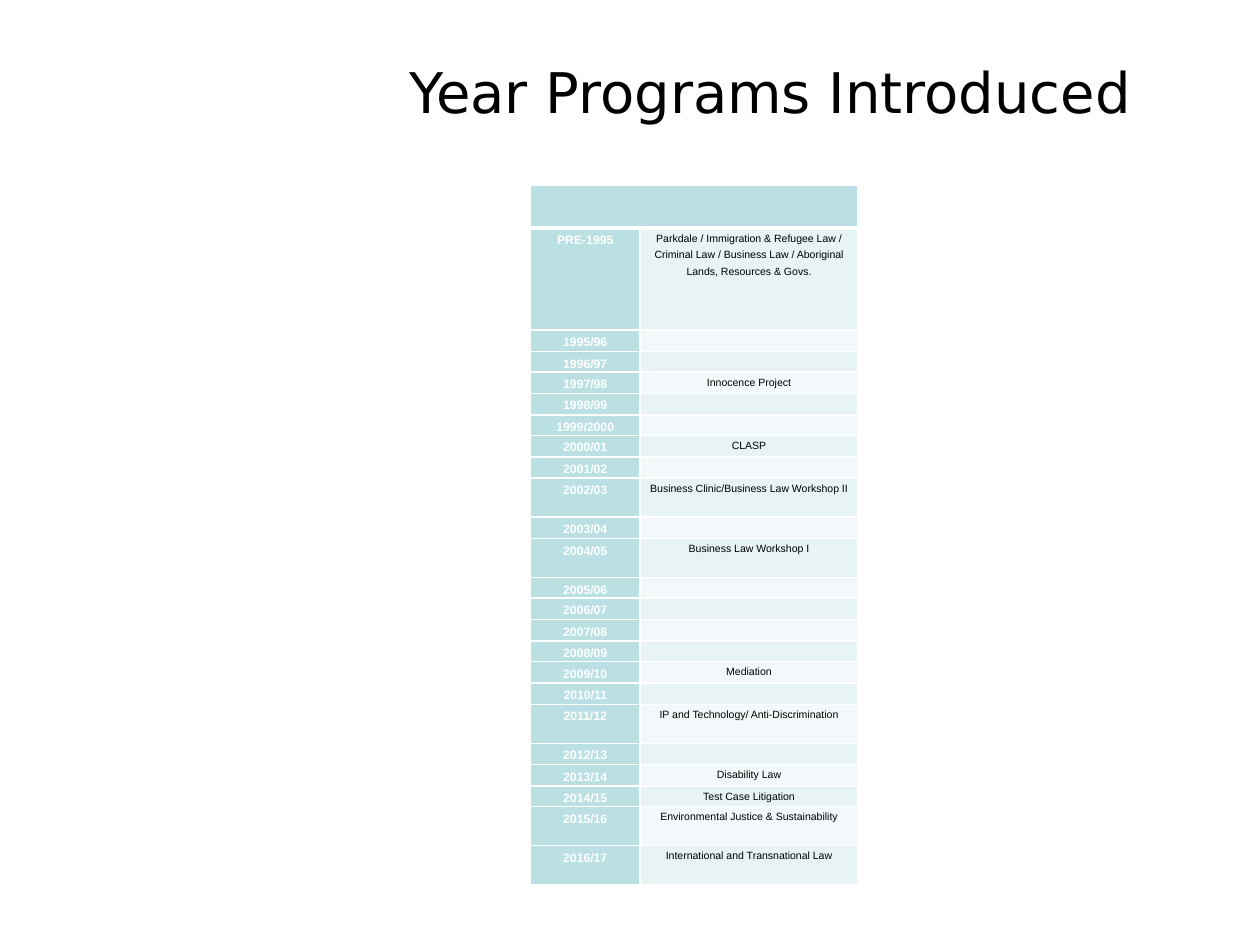
from lxml import etree
from pptx import Presentation
from pptx.dml.color import RGBColor
from pptx.enum.text import MSO_ANCHOR, PP_ALIGN
from pptx.oxml.ns import qn
from pptx.util import Inches, Pt

CENTER = PP_ALIGN.CENTER
MIDDLE = MSO_ANCHOR.MIDDLE

BLACK = RGBColor(0x00, 0x00, 0x00)
WHITE = RGBColor(0xFF, 0xFF, 0xFF)
TEAL = RGBColor(0xBB, 0xE0, 0xE3)
BANDS = (RGBColor(0xF3, 0xF9, 0xFA), RGBColor(0xE7, 0xF3, 0xF4))

COLUMN_WIDTHS = (0.87, 1.73)
HEADER_HEIGHT = 0.34
PROGRAMS = [
    ("PRE-1995", "Parkdale / Immigration & Refugee Law / Criminal Law / "
     "Business Law / Aboriginal Lands, Resources & Govs.", 0.81),
    ("1995/96", "", 0.17),
    ("1996/97", "", 0.16),
    ("1997/98", "Innocence Project", 0.17),
    ("1998/99", "", 0.17),
    ("1999/2000", "", 0.16),
    ("2000/01", "CLASP", 0.17),
    ("2001/02", "", 0.17),
    ("2002/03", "Business Clinic/Business Law Workshop II", 0.31),
    ("2003/04", "", 0.17),
    ("2004/05", "Business Law Workshop I", 0.31),
    ("2005/06", "", 0.16),
    ("2006/07", "", 0.17),
    ("2007/08", "", 0.17),
    ("2008/09", "", 0.16),
    ("2009/10", "Mediation", 0.17),
    ("2010/11", "", 0.17),
    ("2011/12", "IP and Technology/ Anti-Discrimination", 0.31),
    ("2012/13", "", 0.17),
    ("2013/14", "Disability Law", 0.17),
    ("2014/15", "Test Case Litigation", 0.16),
    ("2015/16", "Environmental Justice & Sustainability", 0.31),
    ("2016/17", "International and Transnational Law", 0.31),
]


def add_title(slide, text, left, top, width, height):
    """Place the centred slide title in the given box."""
    tf = slide.shapes.add_textbox(left, top, width, height).text_frame
    tf.word_wrap = True
    tf.vertical_anchor = MIDDLE
    p = tf.paragraphs[0]
    p.text = text
    p.alignment = CENTER
    font = p.runs[0].font
    font.name, font.size, font.color.rgb = "DejaVu Sans", Pt(32), BLACK


def set_borders(cell, bottom=1):
    """Draw white cell borders, with the bottom width in points."""
    tc_pr = cell._tc.get_or_add_tcPr()
    widths = {"a:lnL": 1, "a:lnR": 1, "a:lnT": 1, "a:lnB": bottom}
    for i, (tag, width) in enumerate(widths.items()):
        ln = etree.Element(qn(tag), w=str(Pt(width)))
        fill = etree.SubElement(ln, qn("a:solidFill"))
        etree.SubElement(fill, qn("a:srgbClr"), val=str(WHITE))
        tc_pr.insert(i, ln)


def fill_cell(cell, text, size, color, fill, bold=False, bottom=1):
    """Set the text, fill and borders of one cell."""
    cell.margin_left = cell.margin_right = Inches(0.03)
    cell.margin_top = cell.margin_bottom = 0
    cell.fill.solid()
    cell.fill.fore_color.rgb = fill
    set_borders(cell, bottom)
    p = cell.text_frame.paragraphs[0]
    p.text = text
    p.alignment = CENTER
    p.line_spacing = 1.4
    for r in p.runs:
        r.font.name, r.font.size, r.font.bold = "Arial", Pt(size), bold
        r.font.color.rgb = color
    if not text:
        etree.SubElement(p._p, qn("a:endParaRPr"), sz=str(size * 100))


def add_program_table(slide, left, top, width, height):
    """Place the table of years and programs in the given box."""
    table = slide.shapes.add_table(
        len(PROGRAMS) + 1, len(COLUMN_WIDTHS), left, top, width, height).table
    table.horz_banding = False
    for column, column_width in zip(table.columns, COLUMN_WIDTHS):
        column.width = Inches(column_width)
    table.rows[0].height = Inches(HEADER_HEIGHT)
    for cell in table.rows[0].cells:
        fill_cell(cell, "", 6, BLACK, TEAL, bottom=3)
    table.cell(0, 0).merge(table.cell(0, 1))
    for i, (year, program, row_height) in enumerate(PROGRAMS, 1):
        table.rows[i].height = Inches(row_height)
        fill_cell(table.cell(i, 0), year, 7, WHITE, TEAL, bold=True)
        fill_cell(table.cell(i, 1), program, 6, BLACK, BANDS[i % 2])


def main():
    """Build and save the slide."""
    prs = Presentation()
    prs.slide_width, prs.slide_height = Inches(10), Inches(7.5)
    slide = prs.slides.add_slide(prs.slide_layouts[6])
    add_title(slide, "Year Programs Introduced",
              Inches(2.56), Inches(0.29), Inches(7.11), Inches(0.87))
    add_program_table(slide, Inches(4.21), Inches(1.47),
                      Inches(2.6), Inches(5.59))
    prs.save("out.pptx")


if __name__ == "__main__":
    main()
